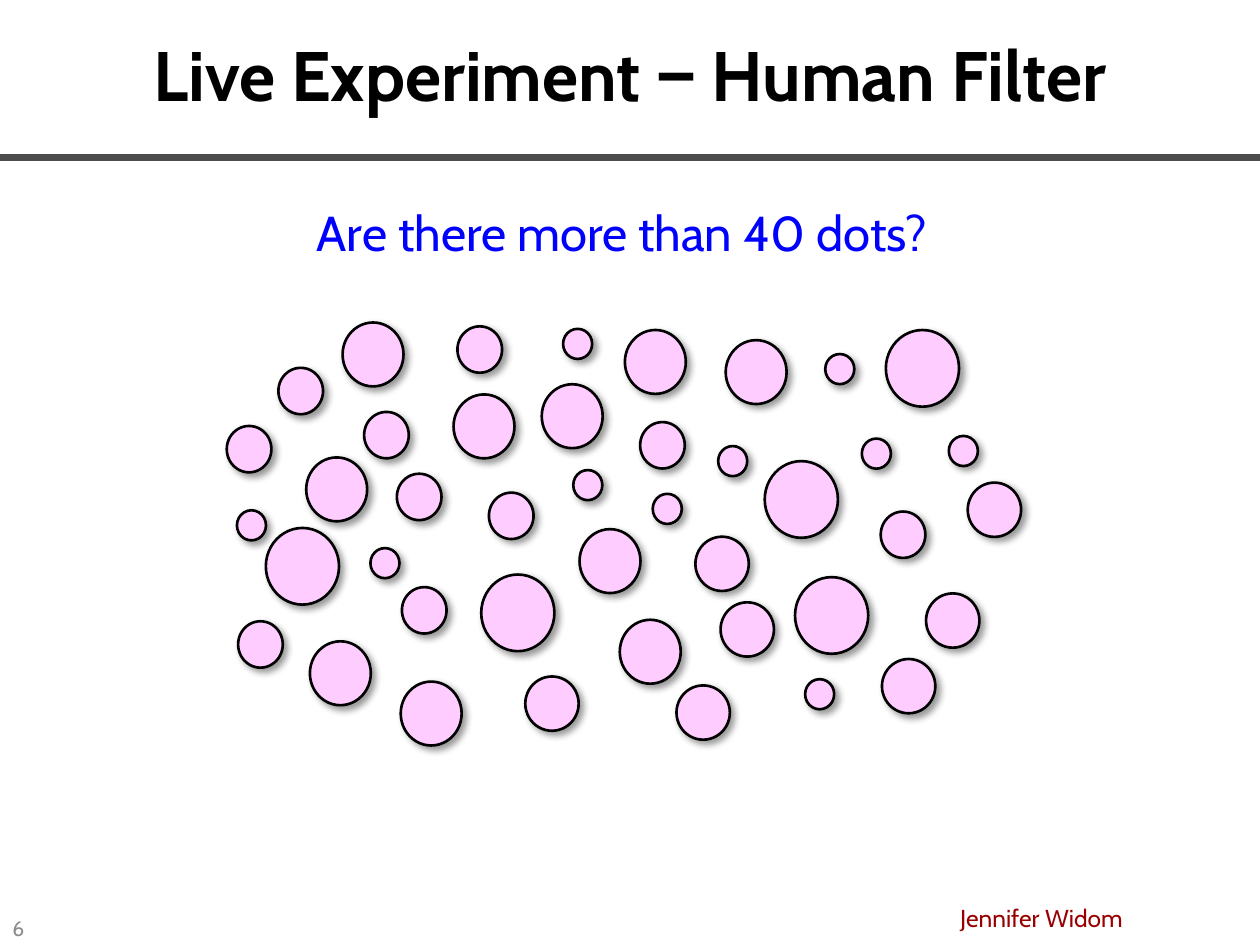
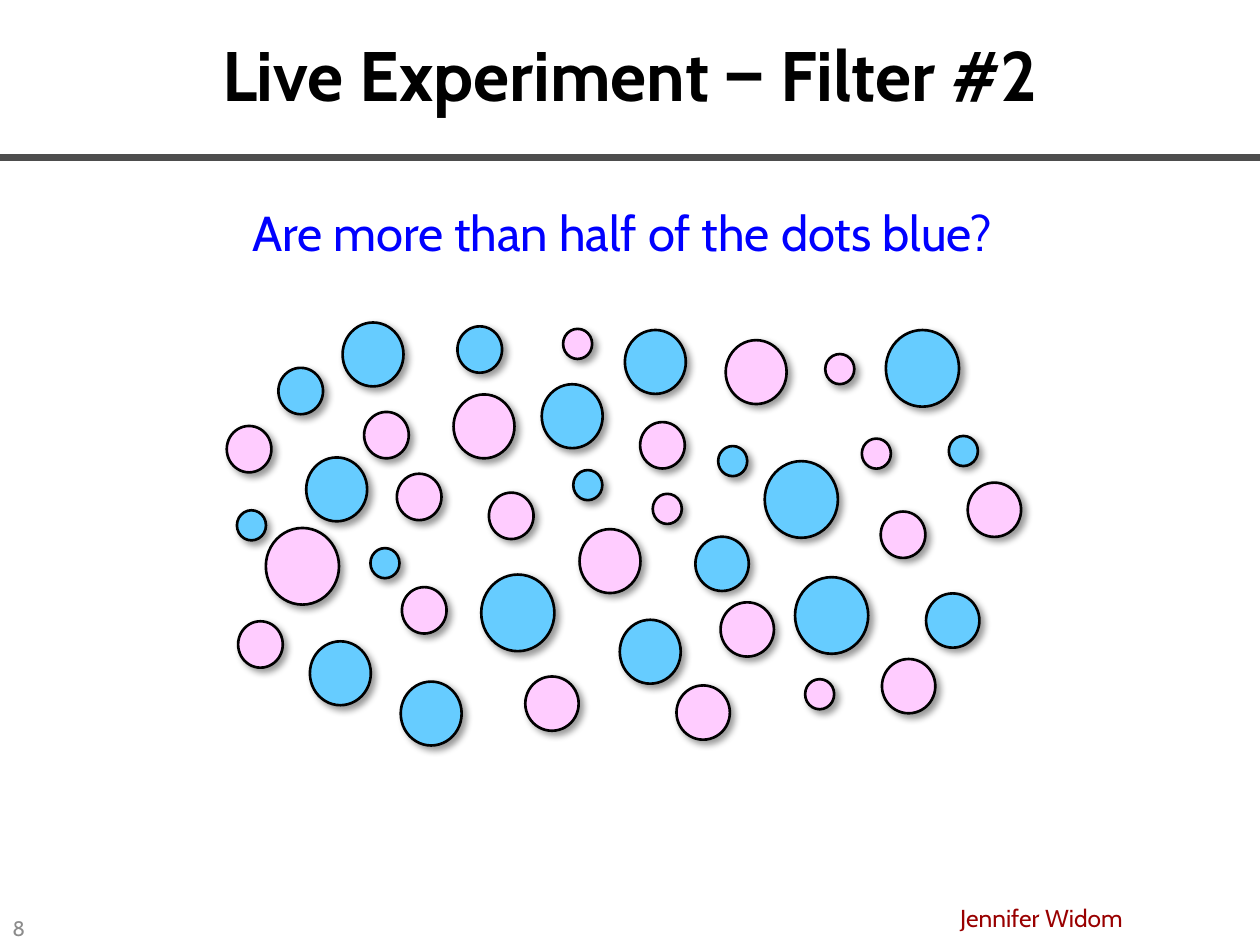
"""Build two crowd-filter slides, each asking a question about one scatter of dots."""
from typing import NamedTuple

from lxml import etree
from pptx import Presentation
from pptx import util as u
from pptx.dml.color import RGBColor
from pptx.enum import shapes, text
from pptx.oxml import ns

Pt = u.Pt
FONT = "Cabin"
SLIDE_W, SLIDE_H = 720, 540
COLORS = {
    "title": "000000",
    "question": "0000FF",
    "author": "990000",
    "number": "8C8C8C",
    "rule": "4D4D4D",
    "outline": "000000",
    "pink": "FFCCFF",
    "blue": "66CCFF",
}


class Box(NamedTuple):
    left: float
    top: float
    width: float
    height: float


class Dot(NamedTuple):
    left: float
    top: float
    blue: bool = False


class Size(NamedTuple):
    width: float
    height: float


class Experiment(NamedTuple):
    number: str
    title: str
    question: str
    two_colors: bool


TITLE_BOX = Box(0, 0, SLIDE_W, 84.2)
QUESTION_BOX = Box(22.3, 112.3, 666, 44)
AUTHOR_BOX = Box(518.4, 512.6, 130.3, 27.4)
NUMBER_BOX = Box(0, 521.3, 33.8, 18.7)
RULE_Y = 90

EXPERIMENTS = [
    Experiment("6", "Live Experiment ‒ Human Filter", "Are there more than 40 dots?", False),
    Experiment("8", "Live Experiment ‒ Filter #2", "Are more than half of the dots blue?", True),
]

DOTS = {
    Size(25.5, 26.5): [
        Dot(159.1, 210.2, True), Dot(226.8, 270.7), Dot(136.1, 355), Dot(261.4, 186.5, True),
        Dot(365.8, 241.2), Dot(129.6, 243.4), Dot(279.4, 281.5), Dot(208.1, 235.4),
        Dot(229.7, 335.5), Dot(503.3, 292.3),
    ],
    Size(34.8, 36.5): [
        Dot(175, 261.4, True), Dot(357.1, 188.6, True), Dot(309.6, 219.6, True),
        Dot(259.2, 225.4), Dot(414.7, 194.4), Dot(331.2, 302.4), Dot(177.1, 366.5, True),
        Dot(195.8, 184.3, True), Dot(354.2, 354.2, True), Dot(229, 389.5, True),
    ],
    Size(16.6, 17.2): [
        Dot(492.5, 250.6), Dot(211.7, 313.2, True), Dot(471.6, 202.3), Dot(460.1, 388.1),
        Dot(321.8, 187.9), Dot(327.6, 268.6, True), Dot(373, 282.2), Dot(410.4, 254.9, True),
        Dot(542.2, 249.1, True), Dot(135.4, 291.6, True),
    ],
    Size(41.8, 43.8): [
        Dot(437, 263.5, True), Dot(275, 328.3, True), Dot(454.3, 329.8, True),
        Dot(506.2, 188.6, True), Dot(151.9, 301.7),
    ],
    Size(30.5, 31): [
        Dot(504, 376.6), Dot(397.4, 306.7, True), Dot(411.8, 344.2), Dot(386.6, 391.7),
        Dot(300.2, 386.6), Dot(529.2, 339.1, True), Dot(553, 275.8),
    ],
}


def rgb(name: str) -> RGBColor:
    """Return the named palette colour."""
    return RGBColor.from_string(COLORS[name])


def write(tf, content: str, *, size: float, color: str, bold: bool = False,
          align=text.PP_ALIGN.LEFT, anchor=text.MSO_ANCHOR.TOP) -> None:
    """Fill a text frame with one formatted paragraph."""
    tf.word_wrap = True
    tf.auto_size = text.MSO_AUTO_SIZE.NONE
    tf.vertical_anchor = anchor
    p = tf.paragraphs[0]
    p.alignment = align
    r = p.add_run()
    r.text = content
    r.font.name = FONT
    r.font.size = Pt(size)
    r.font.bold = bold
    r.font.color.rgb = rgb(color)


def add_text(s, box: Box, content: str, **style) -> None:
    """Add a text box to a slide."""
    write(s.shapes.add_textbox(*map(Pt, box)).text_frame, content, **style)


def add_title(s, content: str) -> None:
    """Place and format the title placeholder."""
    sp = s.shapes.title
    sp.left, sp.top, sp.width, sp.height = map(Pt, TITLE_BOX)
    write(sp.text_frame, content, size=40, color="title", bold=True,
          align=text.PP_ALIGN.CENTER, anchor=text.MSO_ANCHOR.MIDDLE)


def add_rule(s) -> None:
    """Draw the full-width line under the title."""
    line = s.shapes.add_connector(
        shapes.MSO_CONNECTOR.STRAIGHT, 0, Pt(RULE_Y), Pt(SLIDE_W), Pt(RULE_Y))
    line.line.color.rgb = rgb("rule")
    line.line.width = Pt(4.5)
    etree.SubElement(line._element.spPr, ns.qn("a:effectLst"))


def add_shadow(sp) -> None:
    """Give a shape a soft shadow toward the lower right."""
    sp.shadow.inherit = False
    effects = sp._element.spPr.find(ns.qn("a:effectLst"))
    shadow = etree.SubElement(effects, ns.qn("a:outerShdw"), blurRad=str(Pt(4)),
                              dist=str(Pt(3)), dir=str(45 * 60000), rotWithShape="0")
    color = etree.SubElement(shadow, ns.qn("a:srgbClr"), val=COLORS["outline"])
    etree.SubElement(color, ns.qn("a:alpha"), val="40000")


def add_dots(s, two_colors: bool) -> None:
    """Draw the scatter of dots as one group."""
    group = s.shapes.add_group_shape()
    for size, dots in DOTS.items():
        for dot in dots:
            sp = group.shapes.add_shape(
                shapes.MSO_SHAPE.OVAL, Pt(dot.left), Pt(dot.top), *map(Pt, size))
            sp.fill.solid()
            sp.fill.fore_color.rgb = rgb("blue" if two_colors and dot.blue else "pink")
            sp.line.color.rgb = rgb("outline")
            sp.line.width = Pt(1.5)
            add_shadow(sp)


def add_experiment(prs, experiment: Experiment) -> None:
    """Build one experiment slide."""
    s = prs.slides.add_slide(prs.slide_layouts.get_by_name("Title Only"))
    add_rule(s)
    add_text(s, AUTHOR_BOX, "Jennifer Widom", size=14, color="author",
             align=text.PP_ALIGN.RIGHT)
    add_text(s, NUMBER_BOX, experiment.number, size=12, color="number",
             anchor=text.MSO_ANCHOR.MIDDLE)
    add_title(s, experiment.title)
    add_text(s, QUESTION_BOX, experiment.question, size=28, color="question",
             align=text.PP_ALIGN.CENTER)
    add_dots(s, experiment.two_colors)


def main() -> None:
    """Create and save the presentation."""
    prs = Presentation()
    prs.slide_width, prs.slide_height = Pt(SLIDE_W), Pt(SLIDE_H)
    for experiment in EXPERIMENTS:
        add_experiment(prs, experiment)
    prs.save("out.pptx")


if __name__ == "__main__":
    main()
